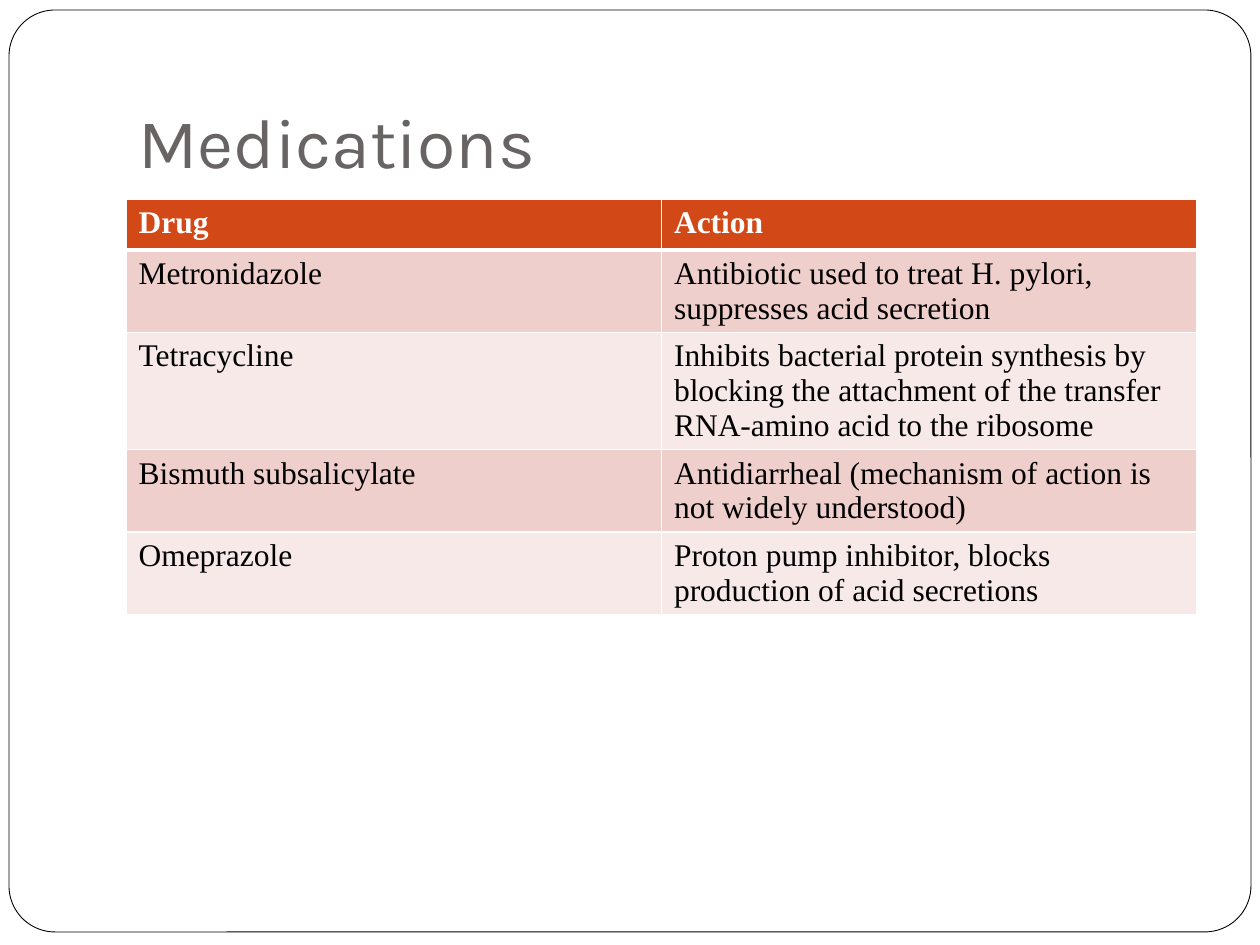
import dataclasses

import pptx
import pptx.dml.color
import pptx.enum.shapes
import pptx.enum.text
import pptx.oxml
import pptx.oxml.ns
import pptx.util

EMU_PER_PX = 914400 // 126


def px(length):
    return pptx.util.Emu(length * EMU_PER_PX)


def rgb(code):
    return pptx.dml.color.RGBColor.from_string(code)


@dataclasses.dataclass(frozen=True)
class Theme:
    paper: str = "FFFFFF"
    ink: str = "000000"
    title: str = "696464"
    header: str = "D34817"
    bands: tuple = ("EFCFCC", "F7E9E8")
    title_font: str = "Karla"
    table_font: str = "Times New Roman"
    title_size: int = 40
    table_size: int = 18


def write(frame, text, font, size, color, bold=False):
    """Put one formatted, left-aligned paragraph into a text frame."""
    para = frame.paragraphs[0]
    para.alignment = pptx.enum.text.PP_ALIGN.LEFT
    span = para.add_run()
    span.text = text
    span.font.name = font
    span.font.size = pptx.util.Pt(size)
    span.font.color.rgb = rgb(color)
    span.font.bold = bold


def border(cell, side, color, points):
    """Add a cell border; call before filling so the XML order is valid."""
    line = pptx.oxml.parse_xml(
        f'<a:{side} {pptx.oxml.ns.nsdecls("a")} w="{pptx.util.Pt(points)}">'
        f'<a:solidFill><a:srgbClr val="{color}"/></a:solidFill></a:{side}>'
    )
    cell._tc.get_or_add_tcPr().append(line)


class SlideBuilder:
    def __init__(self, slide, theme):
        self.slide = slide
        self.theme = theme

    def frame(self, left, top, width, height):
        box = self.slide.shapes.add_shape(
            pptx.enum.shapes.MSO_SHAPE.ROUNDED_RECTANGLE,
            px(left), px(top), px(width), px(height))
        box.adjustments[0] = 0.05
        box.shadow.inherit = False
        box.fill.solid()
        box.fill.fore_color.rgb = rgb(self.theme.paper)
        box.line.color.rgb = rgb(self.theme.ink)
        box.line.width = pptx.util.Pt(0.5)
        # Send behind the placeholders
        box.element.getparent().insert(2, box.element)

    def title(self, text, left, top, width, height):
        box = self.slide.shapes.title
        box.left, box.top = px(left), px(top)
        box.width, box.height = px(width), px(height)
        frame = box.text_frame
        frame.word_wrap = True
        frame.auto_size = pptx.enum.text.MSO_AUTO_SIZE.NONE
        frame.vertical_anchor = pptx.enum.text.MSO_ANCHOR.BOTTOM
        frame.margin_bottom = pptx.util.Inches(0.1)
        write(frame, text, self.theme.title_font, self.theme.title_size,
              self.theme.title)

    def table(self, rows, left, top, width, row_height):
        theme = self.theme
        table = self.slide.shapes.add_table(
            len(rows), len(rows[0]), px(left), px(top), px(width),
            px(row_height * len(rows))).table
        for row_index, row in enumerate(rows):
            is_header = row_index == 0
            fill = theme.header if is_header else theme.bands[(row_index - 1) % 2]
            for column_index, text in enumerate(row):
                cell = table.cell(row_index, column_index)
                for side in ("lnL", "lnR", "lnT", "lnB"):
                    thick = (side == "lnB" and row_index == 0
                             or side == "lnT" and row_index == 1)
                    border(cell, side, theme.paper, 3 if thick else 1)
                cell.fill.solid()
                cell.fill.fore_color.rgb = rgb(fill)
                write(cell.text_frame, text, theme.table_font, theme.table_size,
                      theme.paper if is_header else theme.ink, bold=is_header)


MEDICATIONS = [
    ("Drug", "Action"),
    ("Metronidazole",
     "Antibiotic used to treat H. pylori, suppresses acid secretion"),
    ("Tetracycline",
     "Inhibits bacterial protein synthesis by blocking the attachment "
     "of the transfer RNA-amino acid to the ribosome"),
    ("Bismuth subsalicylate",
     "Antidiarrheal (mechanism of action is not widely understood)"),
    ("Omeprazole",
     "Proton pump inhibitor, blocks production of acid secretions"),
]


def main():
    deck = pptx.Presentation()
    deck.slide_width, deck.slide_height = px(1260), px(945)
    page = deck.slides.add_slide(deck.slide_layouts.get_by_name("Title Only"))
    builder = SlideBuilder(page, Theme())

    # Rounded page frame
    builder.frame(9, 10, 1242, 922)

    # Heading
    builder.title("Medications", 126, 38, 1071, 157)

    # Drug table; rows grow to fit their text
    builder.table(MEDICATIONS, 126, 199, 1071, 51)

    deck.save("out.pptx")


if __name__ == "__main__":
    main()
